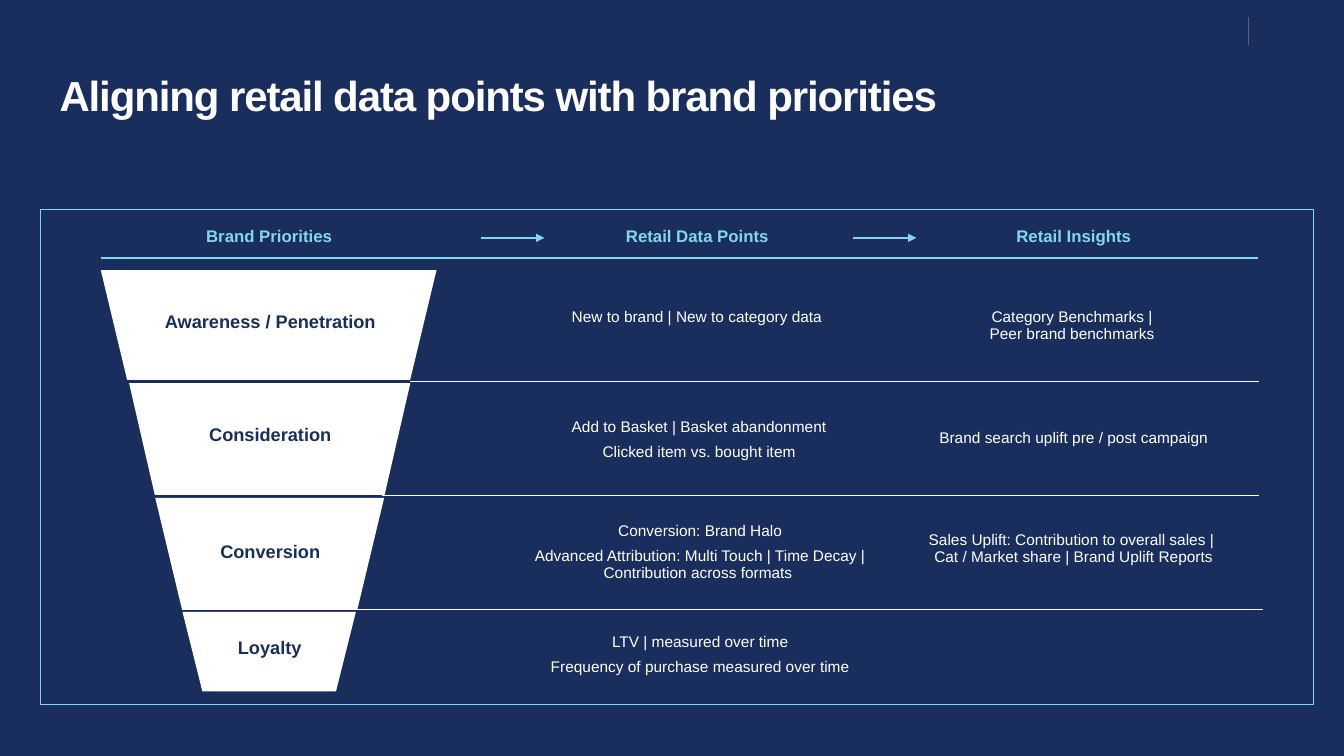
from lxml.etree import SubElement
from pptx import Presentation
from pptx.dml.color import RGBColor
from pptx.enum.shapes import MSO_CONNECTOR, MSO_SHAPE
from pptx.enum.text import MSO_ANCHOR, MSO_AUTO_SIZE, PP_ALIGN
from pptx.oxml.ns import qn
from pptx.util import Emu, Pt

PX = 9144  # 100 px to the inch
NAVY = RGBColor(0x1A, 0x2E, 0x5D)
SKY = RGBColor(0x82, 0xD7, 0xEC)
WHITE = RGBColor(0xFF, 0xFF, 0xFF)
GREY = RGBColor(0x5B, 0x5F, 0x82)


def write(shape, lines, size, color, bold=False, insets=(0, 0, 0, 0), pitch=None,
          align=PP_ALIGN.CENTER):
    """Fill a shape with paragraphs; a newline inside one becomes a line break."""
    frame = shape.text_frame
    frame.word_wrap = True
    frame.auto_size = MSO_AUTO_SIZE.NONE
    frame.vertical_anchor = MSO_ANCHOR.TOP
    (frame.margin_left, frame.margin_top,
     frame.margin_right, frame.margin_bottom) = [Emu(n * PX) for n in insets]
    for i, line in enumerate(lines):
        para = frame.add_paragraph() if i else frame.paragraphs[0]
        para.alignment = align
        para.line_spacing = pitch
        para.space_before = Pt(6 if i else 0)
        for j, part in enumerate(line.split("\n")):
            if j:
                para.add_line_break()
            run = para.add_run()
            run.text = part
            run.font.name = "Arial"
            run.font.size = Pt(size)
            run.font.bold = bold
            run.font.color.rgb = color


def rule(x1, y1, x2, y2, color, width, arrow=False):
    """Draw a straight line, with an arrowhead at its end if asked."""
    line = slide.shapes.add_connector(
        MSO_CONNECTOR.STRAIGHT, *[Emu(n * PX) for n in (x1, y1, x2, y2)])
    line.line.color.rgb = color
    line.line.width = Pt(width)
    if arrow:
        SubElement(line.line._get_or_add_ln(), qn("a:tailEnd"), type="triangle")
    SubElement(line._element.spPr, qn("a:effectLst"))


deck = Presentation()
deck.slide_width, deck.slide_height = Emu(1333 * PX), Emu(750 * PX)
slide = deck.slides.add_slide(deck.slide_layouts[5])
slide.background.fill.solid()
slide.background.fill.fore_color.rgb = NAVY
rule(1238, 17, 1238, 45, GREY, 0.5)

# Title
title = slide.shapes.title
title.left, title.top, title.width, title.height = 0, 0, Emu(1277 * PX), Emu(145 * PX)
write(title, ["Aligning retail data points with brand priorities"], 30, WHITE, True,
      (59, 79, 10, 5), 0.8, PP_ALIGN.LEFT)
title.text_frame.paragraphs[0].runs[0].font._element.set("spc", "-80")

# Frame
border = slide.shapes.add_shape(
    MSO_SHAPE.RECTANGLE, *[Emu(n * PX) for n in (40, 208, 1263, 491)])
border.shadow.inherit = False
border.fill.background()
border.line.color.rgb = SKY
border.line.width = Pt(1)

# Column heads
HEADS = [("Brand Priorities", 149, 236), ("Retail Data Points ", 576, 236),
         ("Retail Insights", 888, 354)]
for text, x, w in HEADS:
    head = slide.shapes.add_textbox(*[Emu(n * PX) for n in (x, 219, w, 39)])
    write(head, [text], 12, SKY, True, (0, 5, 0, 0))
for x in (477, 846):
    rule(x, 236, x + 63, 236, SKY, 1, True)
rule(100, 256, 1248, 256, SKY, 1)

# Funnel: trapezoid box, slant, label, label box
FUNNEL = [
    ((100, 268, 333, 109), 0.24, "Awareness / Penetration", (143, 308, 250, 41)),
    ((128, 380, 279, 111), 0.23, "Consideration", (181, 420, 174, 22)),
    ((154, 494, 227, 111), 0.24, "Conversion", (205, 536, 126, 22)),
    ((181, 607, 172, 79), 0.25, "Loyalty", (206, 631, 123, 20)),
]
for box, slant, label, spot in FUNNEL:
    stage = slide.shapes.add_shape(MSO_SHAPE.TRAPEZOID, *[Emu(n * PX) for n in box])
    stage.adjustments[0] = slant
    stage._element.spPr.xfrm.set("flipV", "1")
    tag = slide.shapes.add_shape(MSO_SHAPE.RECTANGLE, *[Emu(n * PX) for n in spot])
    for shape in (stage, tag):
        shape.shadow.inherit = False
        shape.fill.solid()
        shape.fill.fore_color.rgb = WHITE
        shape.line.fill.background()
    write(tag, [label], 13, NAVY, True)

# Row rules
for x1, x2, y in ((407, 1249, 378), (379, 1249, 491), (353, 1253, 605)):
    rule(x1, y, x2, y, WHITE, 0.5)

# Data points and insights
CELLS = [
    ((511, 307, 365, 17), ["New to brand | New to category data "]),
    ((502, 416, 383, 42), ["Add to Basket | Basket abandonment",
                           "Clicked item vs. bought item"]),
    ((494, 519, 401, 58), ["Conversion: Brand Halo",
                           "Advanced Attribution: Multi Touch | Time Decay | "
                           "Contribution across formats "]),
    ((494, 629, 401, 42), ["LTV | measured over time",
                           "Frequency of purchase measured over time"]),
    ((877, 307, 377, 33), ["Category Benchmarks | \nPeer brand benchmarks "]),
    ((894, 427, 342, 17), ["Brand search uplift pre / post campaign"]),
    ((853, 528, 424, 33), ["Sales Uplift: Contribution to overall sales | \n"
                           "Cat / Market share | Brand Uplift Reports"]),
]
for box, lines in CELLS:
    cell = slide.shapes.add_textbox(*[Emu(n * PX) for n in box])
    write(cell, lines, 11, WHITE, False, (30, 0, 30, 0), 0.9)

deck.save("out.pptx")
